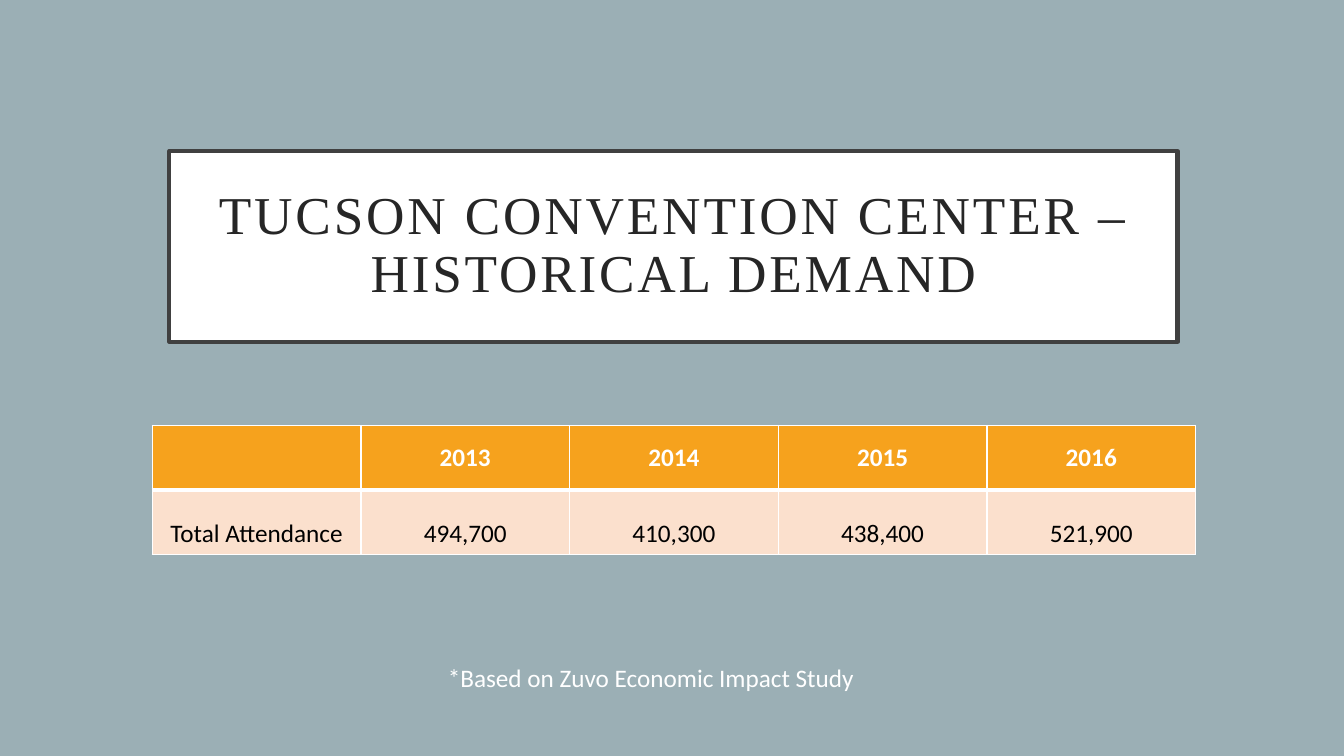
from lxml import etree
from pptx import Presentation
from pptx.dml.color import RGBColor
from pptx.enum.text import MSO_ANCHOR, MSO_AUTO_SIZE, PP_ALIGN
from pptx.oxml.ns import qn
from pptx.util import Emu, Pt

CENTER = PP_ALIGN.CENTER
MIDDLE, BOTTOM = MSO_ANCHOR.MIDDLE, MSO_ANCHOR.BOTTOM
NO_FIT, GROW = MSO_AUTO_SIZE.NONE, MSO_AUTO_SIZE.SHAPE_TO_FIT_TEXT
TITLE_ONLY = 5
COLORS = {
    "background": "9BAFB5",
    "white": "FFFFFF",
    "frame": "404040",
    "title": "262626",
    "header": "F6A21D",
    "body": "FBE0CD",
    "black": "000000",
}


def px(value):
    return Emu(value * 9144)


def format_paragraph(paragraph, font_name, size, color, bold=False):
    paragraph.alignment = CENTER
    paragraph.font.name = font_name
    paragraph.font.size = Pt(size)
    paragraph.font.bold = bold
    paragraph.font.color.rgb = RGBColor.from_string(COLORS[color])


presentation = Presentation()
presentation.slide_width = px(1333)
presentation.slide_height = px(750)
slide = presentation.slides.add_slide(presentation.slide_layouts[TITLE_ONLY])
slide.background.fill.solid()
slide.background.fill.fore_color.rgb = RGBColor.from_string(COLORS["background"])

title = slide.shapes.title
title.left, title.top, title.width, title.height = px(168), px(150), px(1000), px(189)
title.fill.solid()
title.fill.fore_color.rgb = RGBColor.from_string(COLORS["white"])
title.line.color.rgb = RGBColor.from_string(COLORS["frame"])
title.line.width = Pt(3)
title_frame = title.text_frame
title_frame.text = "TUCSON CONVENTION CENTER – HISTORICAL DEMAND"
title_frame.word_wrap = True
title_frame.auto_size = NO_FIT
title_frame.vertical_anchor = MIDDLE
title_frame.margin_left = title_frame.margin_right = px(30)
title_frame.margin_top = title_frame.margin_bottom = px(20)
title_paragraph = title_frame.paragraphs[0]
title_paragraph.line_spacing = 0.9
format_paragraph(title_paragraph, "Times New Roman", 38, "title")
title_paragraph.runs[0].font._element.set("spc", "200")

attendance_rows = [
    ["", "2013", "2014", "2015", "2016"],
    ["Total Attendance", "494,700", "410,300", "438,400", "521,900"],
]
row_styles = [
    {"fill": "header", "text": "white", "bold": True, "anchor": MIDDLE,
     "borders": {"lnL": 1, "lnR": 1, "lnT": 1, "lnB": 3}},
    {"fill": "body", "text": "black", "bold": False, "anchor": BOTTOM,
     "borders": {"lnL": 1, "lnR": 1, "lnT": 3, "lnB": 1}},
]
table = slide.shapes.add_table(2, 5, px(151), px(422), px(1035), px(128)).table
for row_index, (values, style) in enumerate(zip(attendance_rows, row_styles)):
    for column_index, value in enumerate(values):
        cell = table.cell(row_index, column_index)
        cell.text = value
        cell.vertical_anchor = style["anchor"]
        format_paragraph(cell.text_frame.paragraphs[0], "Calibri", 18, style["text"], style["bold"])
        cell_properties = cell._tc.get_or_add_tcPr()
        for side, width in style["borders"].items():
            border = etree.SubElement(cell_properties, qn(f"a:{side}"), w=str(Pt(width)))
            border_fill = etree.SubElement(border, qn("a:solidFill"))
            etree.SubElement(border_fill, qn("a:srgbClr"), val=COLORS["white"])
        cell.fill.solid()
        cell.fill.fore_color.rgb = RGBColor.from_string(COLORS[style["fill"]])

footnote = slide.shapes.add_textbox(px(151), px(652), px(989), px(40))
footnote_frame = footnote.text_frame
footnote_frame.text = "*Based on Zuvo Economic Impact Study"
footnote_frame.word_wrap = True
footnote_frame.auto_size = GROW
format_paragraph(footnote_frame.paragraphs[0], "Calibri", 18, "white")

presentation.save("out.pptx")
